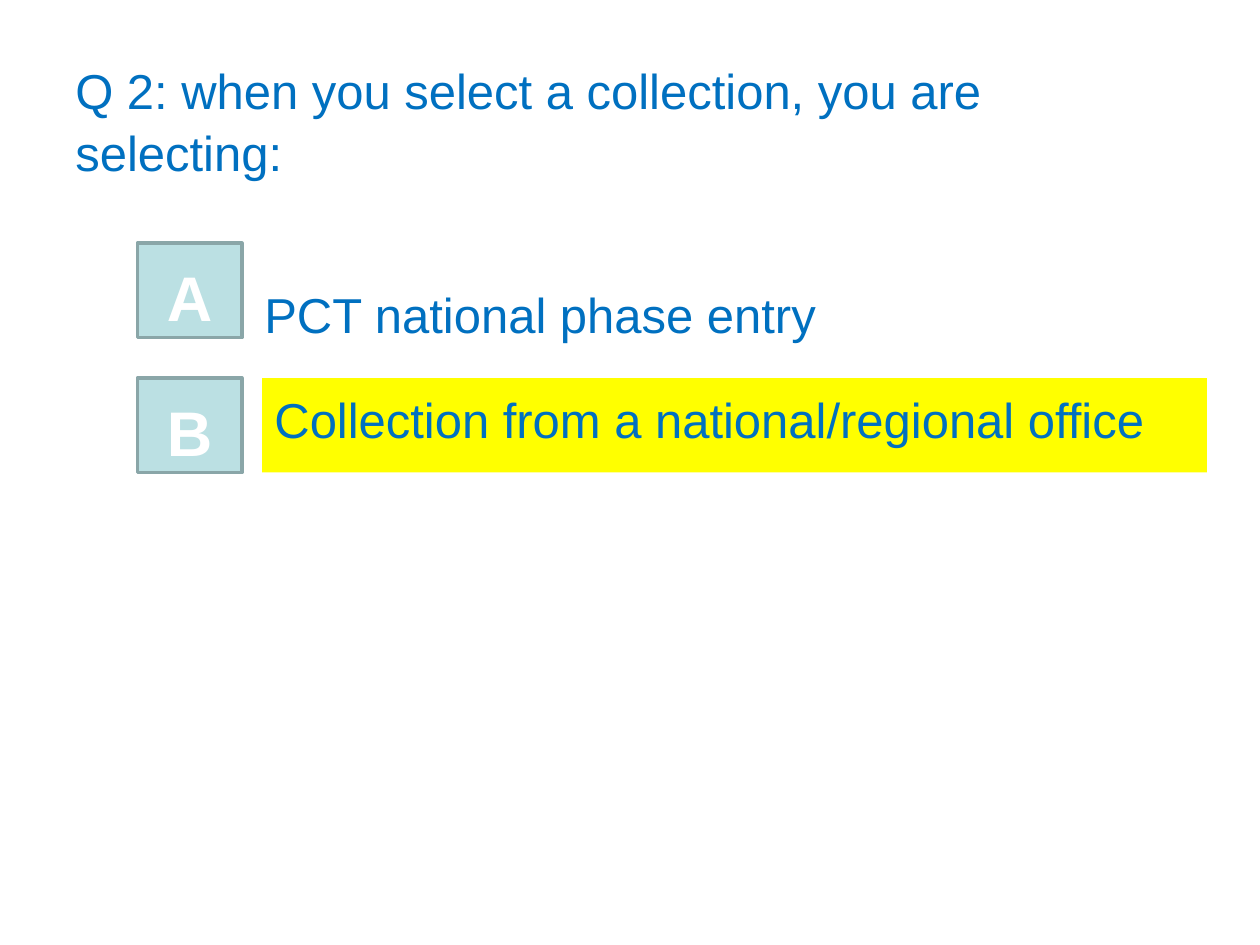
from pptx import Presentation
from pptx.dml.color import RGBColor
from pptx.enum.shapes import MSO_SHAPE
from pptx.enum.text import MSO_ANCHOR, PP_ALIGN
from pptx.util import Inches, Pt

COLORS = {
    "text": "0070C0",
    "letter": "FFFFFF",
    "button": "BBE0E3",
    "border": "8AA6A8",
    "highlight": "FFFF00",
}
BUTTON_LEFT, BUTTON_WIDTH = 1.09, 0.83
ROW_TOP, ROW_STEP, ROW_HEIGHT = 1.93, 1.07, 0.75


def color(name):
    return RGBColor.from_string(COLORS[name])


def write(shape, text, size=28, name="text", bold=False,
          align=PP_ALIGN.LEFT, anchor=MSO_ANCHOR.TOP, top_margin=0.05):
    frame = shape.text_frame
    frame.word_wrap = True
    frame.vertical_anchor = anchor
    frame.margin_top = Inches(top_margin)
    frame.text = text
    paragraph = frame.paragraphs[0]
    paragraph.alignment = align
    font = paragraph.runs[0].font
    font.name = "Arial"
    font.size = Pt(size)
    font.bold = bold
    font.color.rgb = color(name)
    return paragraph


def add_text(slide, box, text, **style):
    shape = slide.shapes.add_textbox(*map(Inches, box))
    return write(shape, text, **style)


def add_box(slide, kind, box, fill, border=None):
    shape = slide.shapes.add_shape(kind, *map(Inches, box))
    shape.shadow.inherit = False
    shape.fill.solid()
    shape.fill.fore_color.rgb = color(fill)
    if border:
        shape.line.color.rgb = color(border)
        shape.line.width = Pt(2)
    else:
        shape.line.fill.background()
    return shape


def add_button(slide, row, letter):
    box = (BUTTON_LEFT, ROW_TOP + row * ROW_STEP, BUTTON_WIDTH, ROW_HEIGHT)
    shape = add_box(slide, MSO_SHAPE.ACTION_BUTTON_CUSTOM, box, "button", "border")
    write(shape, letter, size=36, name="letter", bold=True,
          align=PP_ALIGN.CENTER, anchor=MSO_ANCHOR.MIDDLE, top_margin=0.15)


def main():
    presentation = Presentation()
    presentation.slide_width = Inches(10)
    presentation.slide_height = Inches(7.5)
    slide = presentation.slides.add_slide(presentation.slide_layouts[6])

    title = add_text(slide, (0.5, 0.3, 9, 1.25),
                     "Q 2: when you select a collection, you are selecting:",
                     anchor=MSO_ANCHOR.MIDDLE, top_margin=0.09)
    title.line_spacing = 1.05

    add_text(slide, (2, 2.18, 4.92, 0.55), "PCT national phase entry",
             top_margin=0.08)
    for row, letter in enumerate("AB"):
        add_button(slide, row, letter)

    answer = add_box(slide, MSO_SHAPE.RECTANGLE,
                     (2.08, ROW_TOP + ROW_STEP, 7.5, ROW_HEIGHT), "highlight")
    write(answer, "Collection from a national/regional office", top_margin=0.09)

    presentation.save("out.pptx")


if __name__ == "__main__":
    main()
